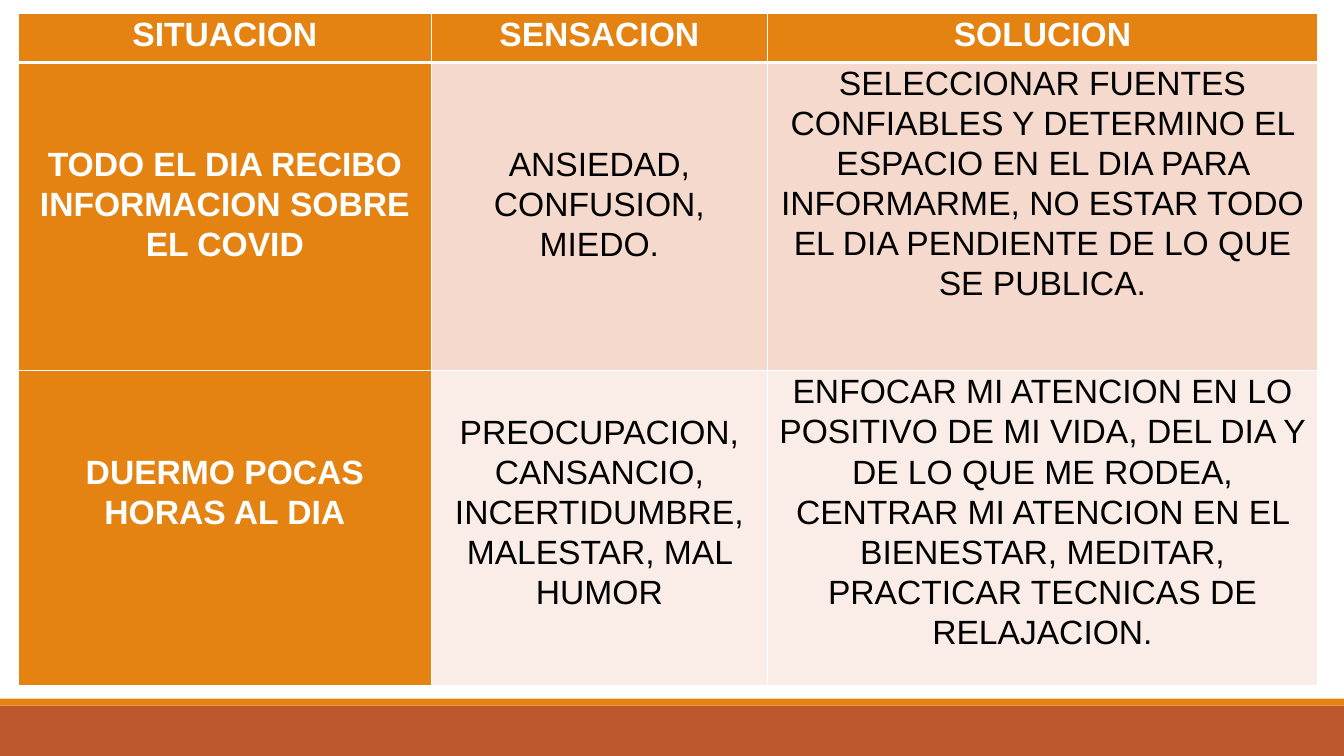
from dataclasses import dataclass

from lxml import etree
from pptx import Presentation
from pptx.dml.color import RGBColor
from pptx.enum.shapes import MSO_SHAPE
from pptx.enum.text import PP_ALIGN
from pptx.oxml.ns import qn
from pptx.util import Inches, Pt

RECT = MSO_SHAPE.RECTANGLE
CENTER = PP_ALIGN.CENTER


@dataclass(frozen=True)
class Theme:
    orange: str = "E48312"
    rust: str = "BD582C"
    rose: str = "F5D9CC"
    pale: str = "FAEDE7"
    white: str = "FFFFFF"
    black: str = "000000"
    font: str = "Arial"
    size: float = 24
    lead: float = 1.07
    thin: float = 1
    thick: float = 3


THEME = Theme()
WIDE, HIGH = 13.33, 7.5
COLS = (4.1, 3.33, 5.46)
ROWS = (0.49, 3.06, 3.12)
BLANK_LINE = 0.4  # height of one text line, in inches
PAD = 0.07

# Each body cell: its text and how many lines it starts below the top
HEADS = ("SITUACION", "SENSACION", "SOLUCION")
BODY = (
    (("TODO EL DIA RECIBO INFORMACION SOBRE EL COVID", 2),
     ("ANSIEDAD, CONFUSION, MIEDO.", 2),
     ("SELECCIONAR FUENTES CONFIABLES Y DETERMINO EL ESPACIO EN EL DIA "
      "PARA INFORMARME, NO ESTAR TODO EL DIA PENDIENTE DE LO QUE SE "
      "PUBLICA.", 0)),
    (("DUERMO POCAS HORAS AL DIA", 2),
     ("PREOCUPACION, CANSANCIO, INCERTIDUMBRE, MALESTAR, MAL HUMOR", 1),
     ("ENFOCAR MI ATENCION EN LO POSITIVO DE MI VIDA, DEL DIA Y DE LO QUE "
      "ME RODEA, CENTRAR MI ATENCION EN EL BIENESTAR, MEDITAR, PRACTICAR "
      "TECNICAS DE RELAJACION.", 0)),
)


def write(frame, text, color=THEME.black, bold=False, size=THEME.size):
    para = frame.paragraphs[0]
    para.alignment = CENTER
    para.line_spacing = THEME.lead
    run = para.add_run()
    run.text = text
    run.font.name = THEME.font
    run.font.size = Pt(size)
    run.font.bold = bold
    run.font.color.rgb = RGBColor.from_string(color)


def edge(cell, side, width):
    props = cell._tc.get_or_add_tcPr()
    line = etree.SubElement(props, qn(f"a:ln{side}"), w=str(Pt(width)))
    fill = etree.SubElement(line, qn("a:solidFill"))
    etree.SubElement(fill, qn("a:srgbClr"), val=THEME.white)


def style(cell, row, fill, drop):
    # Borders go in before the fill, as the schema asks
    for side in "LRTB":
        heavy = (row, side) in ((0, "B"), (1, "T"))
        edge(cell, side, THEME.thick if heavy else THEME.thin)
    cell.fill.solid()
    cell.fill.fore_color.rgb = RGBColor.from_string(fill)
    cell.margin_left = cell.margin_right = Inches(PAD)
    cell.margin_top = Inches(drop * BLANK_LINE)
    cell.margin_bottom = 0


def band(slide, box, color):
    bar = slide.shapes.add_shape(RECT, *map(Inches, box))
    bar.shadow.inherit = False
    bar.fill.solid()
    bar.fill.fore_color.rgb = RGBColor.from_string(color)
    bar.line.fill.background()


def footer(slide, box):
    left, top, width, height = box
    strip = height / 8
    band(slide, (left, top + strip, width, height - strip), THEME.rust)
    band(slide, (left, top, width, strip), THEME.orange)


def grid(slide, box):
    left, top, width, height = box
    frame = slide.shapes.add_table(len(ROWS), len(COLS), *map(Inches, box))
    table = frame.table
    table.horz_banding = False
    for col, share in zip(table.columns, COLS):
        col.width = Inches(width * share / sum(COLS))
    for row, share in zip(table.rows, ROWS):
        row.height = Inches(height * share / sum(ROWS))

    lines = (tuple((head, 0) for head in HEADS), *BODY)
    tints = (THEME.orange, THEME.rose, THEME.pale)
    for r, (line, tint) in enumerate(zip(lines, tints)):
        for c, (text, drop) in enumerate(line):
            lead = r == 0 or c == 0
            cell = table.cell(r, c)
            style(cell, r, THEME.orange if lead else tint, drop)
            write(cell.text_frame, text, bold=lead,
                  color=THEME.white if lead else THEME.black)


def main():
    deck = Presentation()
    deck.slide_width, deck.slide_height = Inches(WIDE), Inches(HIGH)
    slide = deck.slides.add_slide(deck.slide_layouts[6])
    # Bands along the foot, then the table above them
    footer(slide, (0, 6.93, WIDE, HIGH - 6.93))
    grid(slide, (0.18, 0.13, sum(COLS), sum(ROWS)))
    deck.save("out.pptx")


if __name__ == "__main__":
    main()
